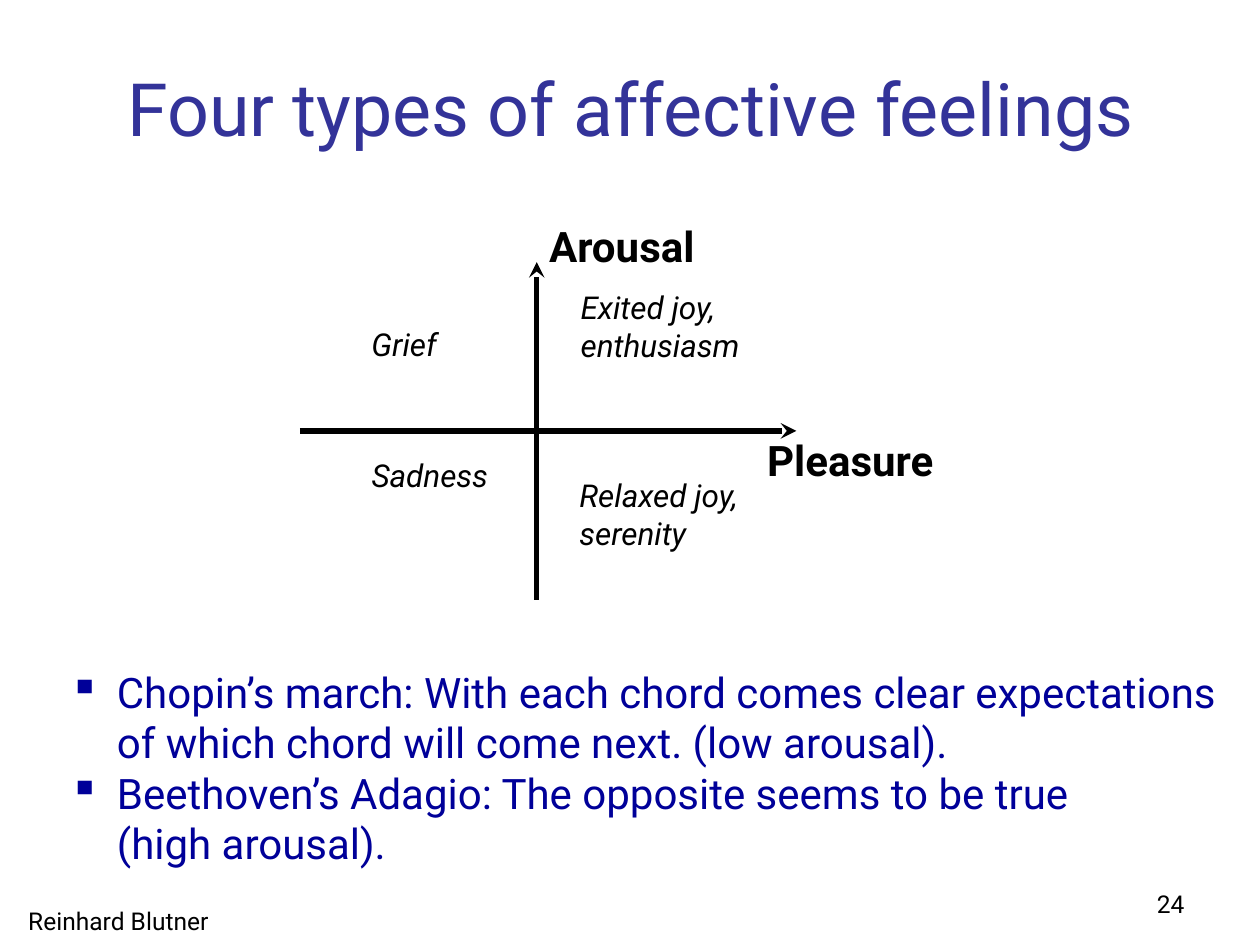
import pptx
import pptx.util
import pptx.dml.color
import pptx.enum.shapes
import pptx.enum.text
import pptx.oxml
import pptx.oxml.ns

Inches, Pt = pptx.util.Inches, pptx.util.Pt
RGB = pptx.dml.color.RGBColor
ALIGN = pptx.enum.text.PP_ALIGN
ANCHOR = pptx.enum.text.MSO_ANCHOR

BLACK = RGB(0, 0, 0)
TITLE_BLUE = RGB(0x33, 0x33, 0x99)
TEXT_BLUE = RGB(0, 0, 0x99)
WIDTH, HEIGHT = Inches(10), Inches(7.5)

# Text styles: font values for every run
STYLES = {
    "small": {"size": Pt(14), "color": BLACK},
    "title": {"size": Pt(42), "color": TITLE_BLUE},
    "axis": {"size": Pt(24), "color": BLACK, "bold": True},
    "feeling": {"size": Pt(18), "color": BLACK, "italic": True},
    "body": {"size": Pt(24), "color": TEXT_BLUE},
}

# Content; boxes are (left, top, width, height) in percent of the slide
TITLE = ["Four types of affective feelings"]
EXAMPLES = [
    "Chopin’s march: With each chord comes clear expectations "
    "of which chord will come next. (low arousal).",
    "Beethoven’s Adagio: The opposite seems to be true \v(high arousal).",
]
AXES = [
    ("Arousal", (42.6, 63.47), (42.6, 27.73), (42.6, 22.67, 14.8, 6.67)),
    ("Pleasure", (23.8, 45.6), (63.2, 45.6), (59.9, 45.33, 16.6, 6.67)),
]
FEELINGS = [
    (["Exited joy,", "enthusiasm"], (45.1, 29.87, 14.7, 9.47)),
    (["Relaxed joy,", "serenity"], (45, 49.73, 15.4, 9.47)),
    (["Grief"], (28.5, 33.73, 7.3, 5.33)),
    (["Sadness"], (28.5, 47.6, 11.9, 5.33)),
]


def place(x, y):
    return int(WIDTH * x / 100), int(HEIGHT * y / 100)


def add_xml(parent, xml):
    ns = pptx.oxml.ns.nsdecls("a")
    parent.append(pptx.oxml.parse_xml(xml.replace("/>", f" {ns}/>")))


def add_text(s, lines, box, style, align=ALIGN.LEFT, anchor=ANCHOR.TOP,
             wrap=True, bullet=None):
    tf = s.shapes.add_textbox(*place(*box[:2]), *place(*box[2:])).text_frame
    tf.word_wrap, tf.vertical_anchor = wrap, anchor
    for i, line in enumerate(lines):
        p = tf.add_paragraph() if i else tf.paragraphs[0]
        p.text, p.alignment = line, align
        if bullet:
            pPr = p._p.get_or_add_pPr()
            pPr.set("marL", str(Inches(0.38)))
            pPr.set("indent", str(-Inches(0.38)))
            add_xml(pPr, f'<a:buChar char="{bullet}"/>')
        for r in p.runs:
            r.font.name = "Roboto"
            for key, value in STYLES[style].items():
                if key == "color":
                    r.font.color.rgb = value
                else:
                    setattr(r.font, key, value)


def add_axis(s, start, end):
    line = s.shapes.add_connector(pptx.enum.shapes.MSO_CONNECTOR.STRAIGHT,
                                  *place(*start), *place(*end))
    line.line.color.rgb, line.line.width = BLACK, Pt(3)
    add_xml(line.line._get_or_add_ln(), '<a:tailEnd type="stealth"/>')
    add_xml(line._element.spPr, "<a:effectLst/>")


prs = pptx.Presentation()
prs.slide_width, prs.slide_height = WIDTH, HEIGHT
s = prs.slides.add_slide(prs.slide_layouts[6])

# Footer and title
add_text(s, ["Reinhard Blutner"], (-4, 95.2, 26.8, 4.8), "small", ALIGN.CENTER)
add_text(s, ["24"], (71.7, 93.47, 23.3, 6.93), "small", ALIGN.RIGHT)
add_text(s, TITLE, (-3.1, 6.53, 106.3, 9.6), "title", ALIGN.CENTER,
         ANCHOR.MIDDLE)

# Axes with the feelings in the four quadrants
for name, start, end, box in AXES:
    add_axis(s, start, end)
    add_text(s, [name], box, "axis", wrap=False)
for lines, box in FEELINGS:
    add_text(s, lines, box, "feeling", wrap=False)

# Musical examples
add_text(s, EXAMPLES, (4.5, 69.87, 94, 22.93), "body", bullet="▪")

prs.save("out.pptx")
